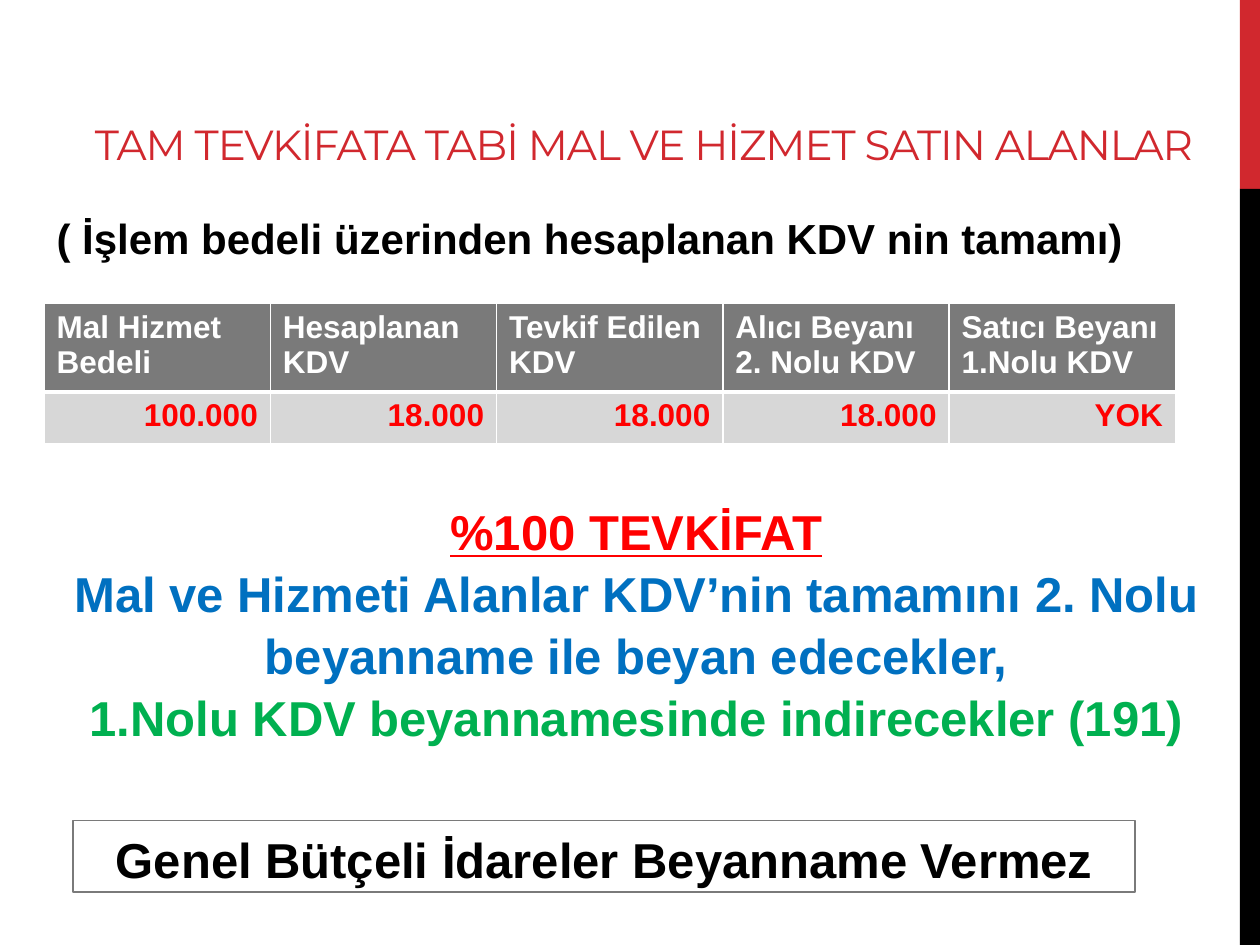
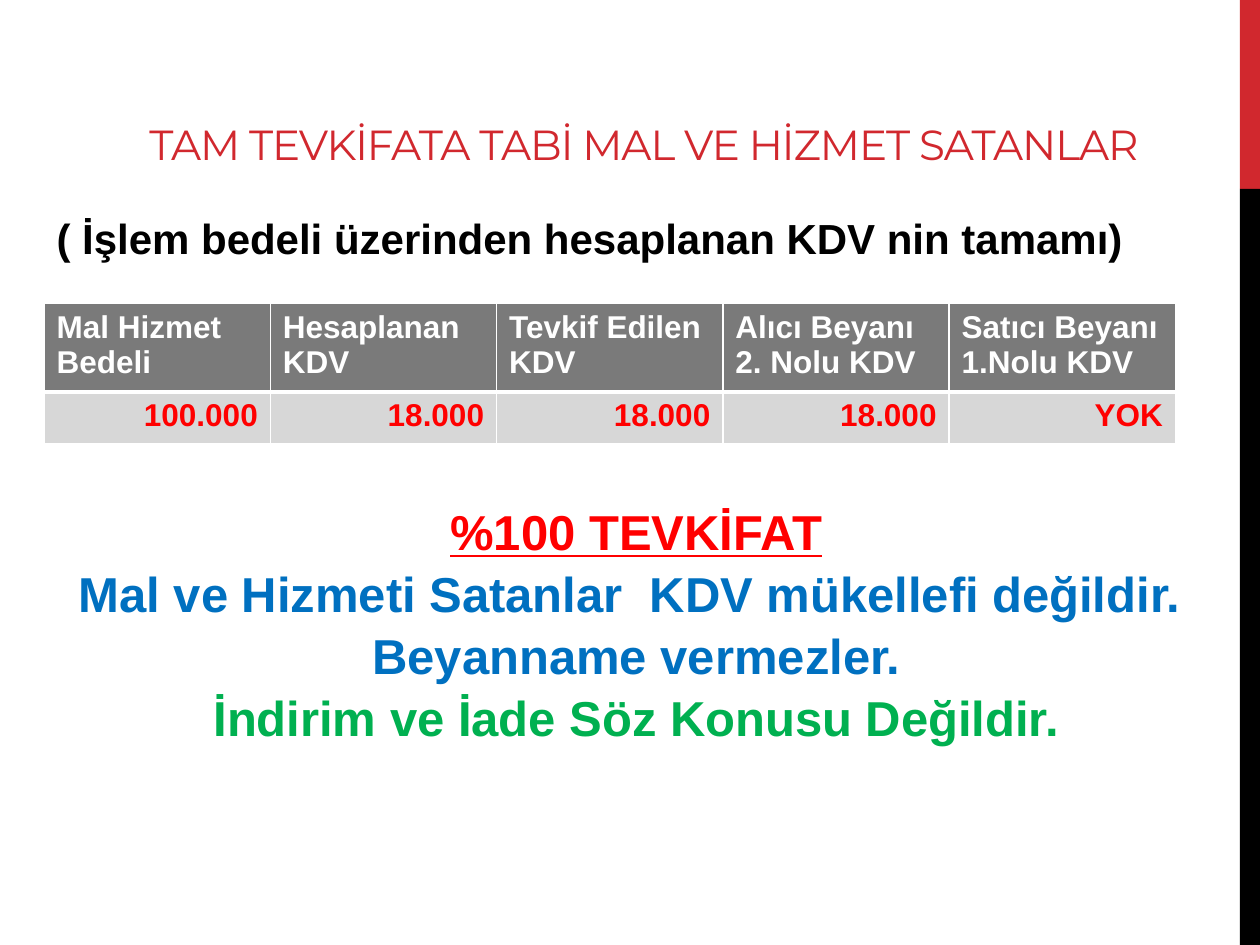
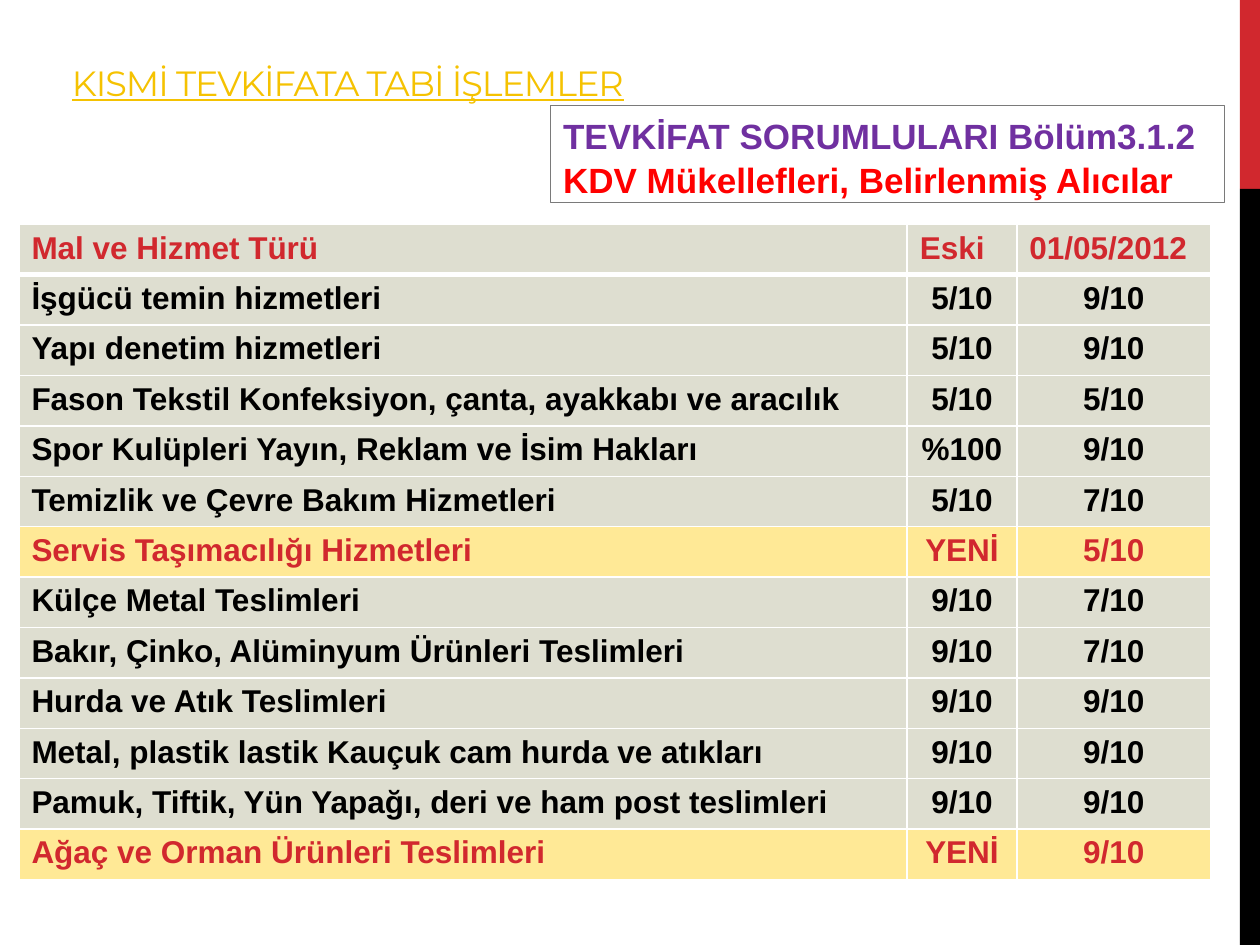
import pptx
import pptx.dml.color
import pptx.enum.shapes
import pptx.enum.text
import pptx.oxml
import pptx.oxml.ns
import pptx.util
from pptx.util import Inches

COLORS = {
    "red": "D1282E", "bright_red": "FF0000", "black": "000000", "white": "FFFFFF",
    "blue": "0070C0", "green": "00B050", "purple": "7030A0", "gold": "F5C201",
    "gray": "7A7A7A", "light_gray": "D7D7D7", "sand": "DEDED0", "yellow": "FFE996",
}
BODY_FONT = "Arial"
TITLE_FONT = "Montserrat"
LEFT = pptx.enum.text.PP_ALIGN.LEFT
CENTER = pptx.enum.text.PP_ALIGN.CENTER
RIGHT = pptx.enum.text.PP_ALIGN.RIGHT
RECTANGLE = pptx.enum.shapes.MSO_SHAPE.RECTANGLE

RATES = [
    ("Mal ve Hizmet Türü", "Eski", "01/05/2012"),
    ("İşgücü temin hizmetleri", "5/10", "9/10"),
    ("Yapı denetim hizmetleri", "5/10", "9/10"),
    ("Fason Tekstil Konfeksiyon, çanta, ayakkabı ve aracılık", "5/10", "5/10"),
    ("Spor Kulüpleri Yayın, Reklam ve İsim Hakları", "%100", "9/10"),
    ("Temizlik ve Çevre Bakım Hizmetleri", "5/10", "7/10"),
    ("Servis Taşımacılığı Hizmetleri", "YENİ", "5/10"),
    ("Külçe Metal Teslimleri", "9/10", "7/10"),
    ("Bakır, Çinko, Alüminyum Ürünleri Teslimleri", "9/10", "7/10"),
    ("Hurda ve Atık Teslimleri", "9/10", "9/10"),
    ("Metal, plastik lastik Kauçuk cam hurda ve atıkları", "9/10", "9/10"),
    ("Pamuk, Tiftik, Yün Yapağı, deri ve ham post teslimleri", "9/10", "9/10"),
    ("Ağaç ve Orman Ürünleri Teslimleri", "YENİ", "9/10"),
]
FULL_WITHHOLDING = [
    ("Mal Hizmet Bedeli", "Hesaplanan KDV", "Tevkif Edilen KDV",
     "Alıcı Beyanı\n2. Nolu KDV", "Satıcı Beyanı\n1.Nolu KDV"),
    ("100.000", "18.000", "18.000", "18.000", "YOK"),
]


def rgb(color):
    return pptx.dml.color.RGBColor.from_string(COLORS[color])


def box(left, top, width, height):
    return Inches(left), Inches(top), Inches(width), Inches(height)


def add_run(paragraph, text, size, color, font=BODY_FONT, bold=True, underline=False):
    run = paragraph.add_run()
    run.text = text
    run.font.name = font
    run.font.size = pptx.util.Pt(size)
    run.font.bold = bold
    run.font.underline = underline
    run.font.color.rgb = rgb(color)
    return run


def write_lines(frame, lines, size, align=LEFT, spacing=None):
    for index, (text, color, underline) in enumerate(lines):
        paragraph = frame.paragraphs[0] if index == 0 else frame.add_paragraph()
        paragraph.alignment = align
        paragraph.line_spacing = spacing
        add_run(paragraph, text, size, color, underline=underline)


def add_bands(slide):
    layout_tree = slide.slide_layout.shapes.element
    for top, height, color in ((0, 1.5, "red"), (1.5, 6, "black")):
        band = slide.shapes.add_shape(RECTANGLE, *box(9.84, top, 0.16, height))
        band.shadow.inherit = False
        band.fill.solid()
        band.fill.fore_color.rgb = rgb(color)
        band.line.fill.background()
        layout_tree.append(band.element)


def add_title(slide, text, place, size=24, color="red", underline=False):
    title = slide.shapes.title
    title.left, title.top, title.width, title.height = box(*place)
    frame = title.text_frame
    frame.auto_size = pptx.enum.text.MSO_AUTO_SIZE.NONE
    frame.word_wrap = True
    frame.vertical_anchor = pptx.enum.text.MSO_ANCHOR.BOTTOM
    paragraph = frame.paragraphs[0]
    paragraph.alignment = CENTER
    run = add_run(paragraph, text, size, color, TITLE_FONT, False, underline)
    run.font._element.set("spc", "-60")


def add_text(slide, lines, place, size, align=LEFT):
    frame = slide.shapes.add_textbox(*box(*place)).text_frame
    frame.word_wrap = True
    write_lines(frame, lines, size, align, 1.05)


def add_framed_text(slide, lines, place, size, align=LEFT):
    panel = slide.shapes.add_shape(RECTANGLE, *box(*place))
    panel.shadow.inherit = False
    panel.fill.background()
    panel.line.color.rgb = rgb("gray")
    panel.line.width = pptx.util.Pt(0.75)
    panel.text_frame.word_wrap = True
    panel.text_frame.vertical_anchor = pptx.enum.text.MSO_ANCHOR.TOP
    write_lines(panel.text_frame, lines, size, align, 1.05)


def set_borders(cell, top, bottom):
    properties = cell._tc.get_or_add_tcPr()
    for side, points in (("L", 1), ("R", 1), ("T", top), ("B", bottom)):
        properties.append(pptx.oxml.parse_xml(
            f'<a:ln{side} {pptx.oxml.ns.nsdecls("a")} w="{pptx.util.Pt(points)}">'
            f'<a:solidFill><a:srgbClr val="{COLORS["white"]}"/></a:solidFill></a:ln{side}>'))


def add_rows(slide, rows, place, widths, heights, style):
    table = slide.shapes.add_table(len(rows), len(widths), *box(*place)).table
    for column, width in zip(table.columns, widths):
        column.width = Inches(width)
    for r, (values, height) in enumerate(zip(rows, heights)):
        table.rows[r].height = Inches(height)
        for c, value in enumerate(values):
            fill, color, align = style(r, c, values)
            cell = table.cell(r, c)
            set_borders(cell, 3 if r == 1 else 1, 3 if r == 0 else 1)
            cell.fill.solid()
            cell.fill.fore_color.rgb = rgb(fill)
            lines = [(line, color, False) for line in value.split("\n")]
            write_lines(cell.text_frame, lines, 18, align)


def withholding_style(r, c, values):
    return ("gray", "white", LEFT) if r == 0 else ("light_gray", "bright_red", RIGHT)


def rate_style(r, c, values):
    if r == 0:
        return "sand", "red", LEFT
    align = CENTER if c else LEFT
    return ("yellow", "red", align) if "YENİ" in values else ("sand", "black", align)


def add_full_withholding(slide, party, duty, deduction):
    add_title(slide, f"TAM TEVKİFATA TABİ MAL VE HİZMET {party}", (0.5, 0.17, 9.22, 1.22))
    add_text(slide, [("%100 TEVKİFAT", "bright_red", True), (duty, "blue", False),
                     (deduction, "green", False)], (0.38, 3.91, 9.34, 1.99), 28, CENTER)
    add_text(slide, [("( İşlem bedeli üzerinden hesaplanan KDV nin tamamı)", "black", False)],
             (0.35, 1.62, 8.98, 0.5), 24)
    add_rows(slide, FULL_WITHHOLDING, (0.35, 2.41, 8.98, 1.11), [8.98 / 5] * 5,
             [0.69, 0.41], withholding_style)


def add_partial_withholding(slide):
    add_title(slide, "KISMİ TEVKİFATA TABİ İŞLEMLER", (0.12, 0.16, 5.28, 0.71),
              20, "gold", True)
    add_framed_text(slide, [("TEVKİFAT SORUMLULARI Bölüm3.1.2", "purple", False),
                            ("KDV Mükellefleri, Belirlenmiş Alıcılar", "bright_red", False)],
                    (4.37, 0.84, 5.35, 0.77), 20)
    add_rows(slide, RATES, (0.15, 1.78, 9.46, 5.2), [7.05, 0.87, 1.54],
             [5.2 / len(RATES)] * len(RATES), rate_style)


def main():
    deck = pptx.Presentation()
    deck.slide_width, deck.slide_height = Inches(10), Inches(7.5)
    title_only = deck.slide_layouts[5]
    buyers, sellers, partial = [deck.slides.add_slide(title_only) for _ in range(3)]
    add_bands(buyers)
    add_full_withholding(
        buyers, "SATIN ALANLAR",
        "Mal ve Hizmeti Alanlar KDV’nin tamamını 2. Nolu beyanname ile beyan edecekler,",
        "1.Nolu KDV beyannamesinde indirecekler (191)")
    add_framed_text(buyers, [("Genel Bütçeli İdareler Beyanname Vermez", "black", False)],
                    (0.58, 6.51, 8.43, 0.57), 28, CENTER)
    add_full_withholding(
        sellers, "SATANLAR",
        "Mal ve Hizmeti Satanlar  KDV mükellefi değildir.  Beyanname vermezler.",
        "İndirim ve İade Söz Konusu Değildir.")
    add_partial_withholding(partial)
    deck.save("out.pptx")


if __name__ == "__main__":
    main()
